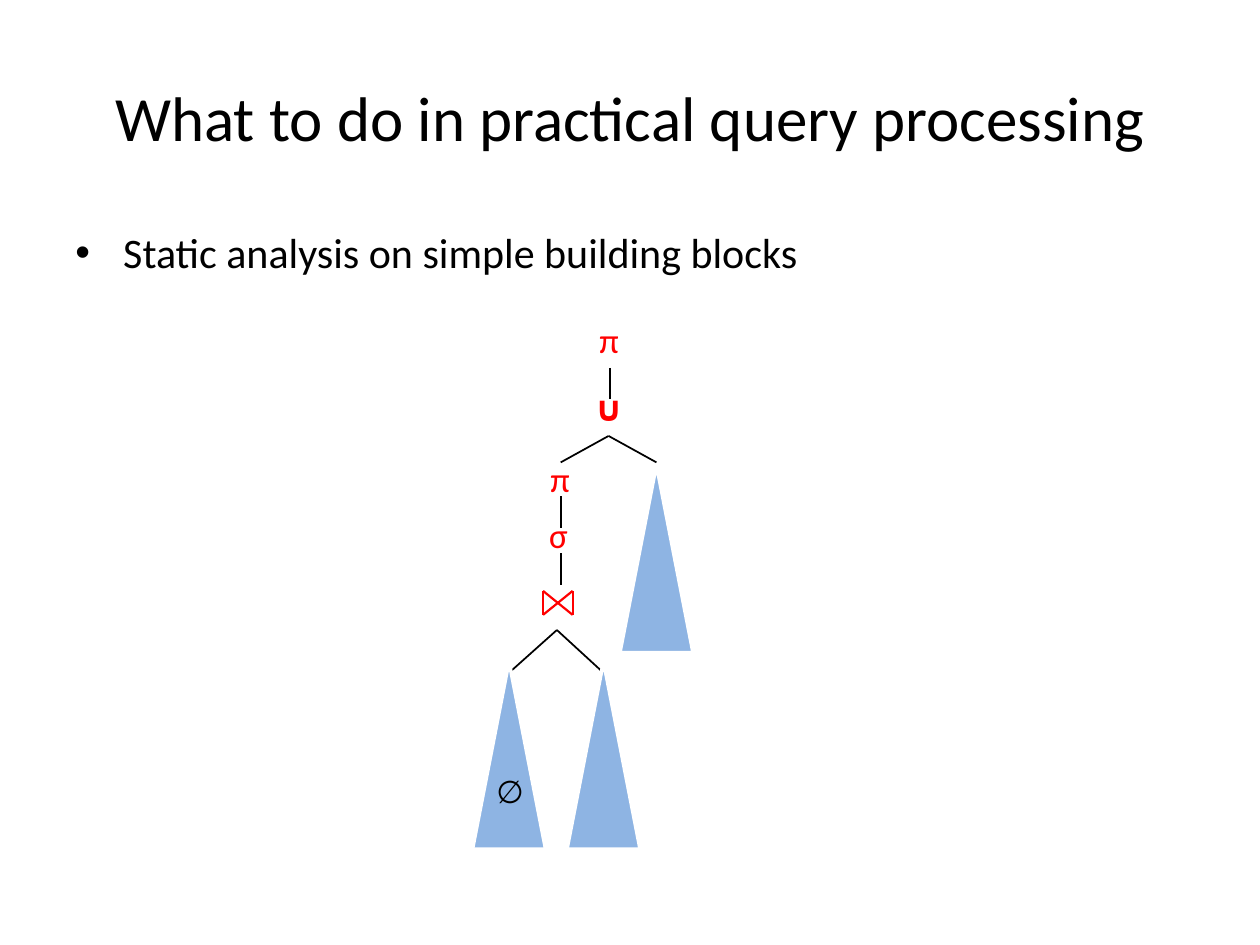
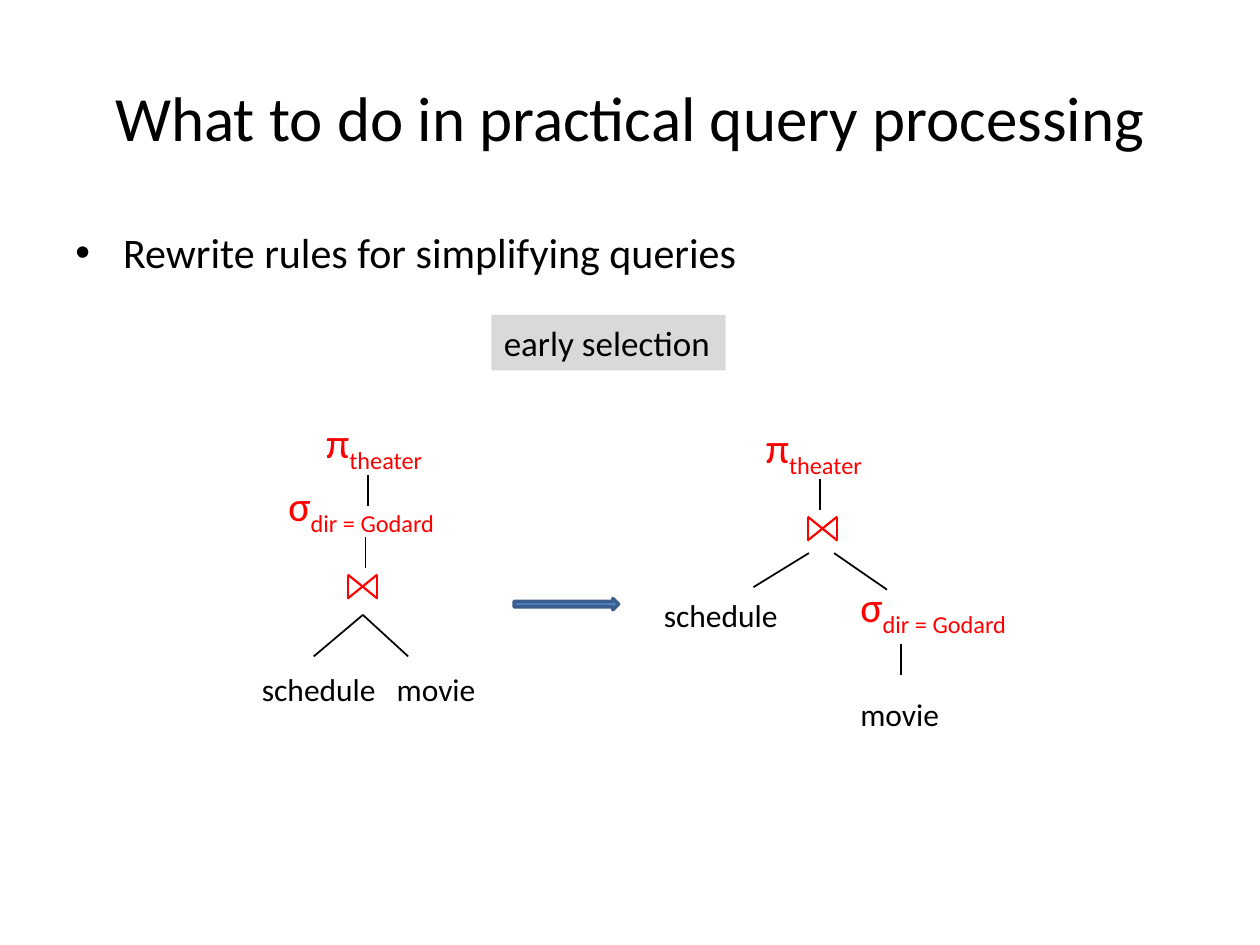
import lxml.etree
import pptx
import pptx.dml.color
import pptx.enum.shapes
import pptx.enum.text
import pptx.oxml.ns
import pptx.util

COLS, ROWS = 100, 75
CELL = pptx.util.Inches(0.1)
FONT = "Calibri"
BLACK, WHITE, RED = "000000", "FFFFFF", "FF0000"
SKY, GREY, BLUE, NAVY = "8EB4E3", "D9D9D9", "4F81BD", "3A5F8C"
TITLE = "What to do in practical query processing"
STEM = 2.5
SHAPE = pptx.enum.shapes.MSO_SHAPE
ANCHOR = pptx.enum.text.MSO_ANCHOR
ALIGN = pptx.enum.text.PP_ALIGN


def cells(*nums):
    """Turn columns and rows of the grid into lengths."""
    return [round(num * CELL) for num in nums]


def rgb(code):
    return pptx.dml.color.RGBColor.from_string(code)


def add_tag(parent, name, **attrs):
    tag = lxml.etree.SubElement(parent, pptx.oxml.ns.qn(name))
    for key, value in attrs.items():
        tag.set(key, value)


def style(run, size, color, bold=False):
    run.font.name = FONT
    run.font.size = pptx.util.Pt(size)
    run.font.bold = bold
    run.font.color.rgb = rgb(color)


def solid(slide, kind, box, fill, edge=None):
    shape = slide.shapes.add_shape(kind, *cells(*box))
    shape.shadow.inherit = False
    shape.fill.solid()
    shape.fill.fore_color.rgb = rgb(fill)
    if edge:
        shape.line.color.rgb = rgb(edge)
        shape.line.width = pptx.util.Pt(2)
    else:
        shape.line.fill.background()
    return shape


def label(slide, box, text, size, color=BLACK, fill=None, sub="", bold=False):
    """Place one line of text, with an optional subscript and fill."""
    if fill:
        shape = solid(slide, SHAPE.RECTANGLE, box, fill)
    else:
        shape = slide.shapes.add_textbox(*cells(*box))
    frame = shape.text_frame
    frame.word_wrap = False
    frame.auto_size = pptx.enum.text.MSO_AUTO_SIZE.SHAPE_TO_FIT_TEXT
    frame.vertical_anchor = ANCHOR.TOP
    para = frame.paragraphs[0]
    para.text = text
    para.alignment = ALIGN.LEFT
    if sub:
        low = para.add_run()
        low.text = sub
        low._r.get_or_add_rPr().set("baseline", "-25000")
    for run in para.runs:
        style(run, size, color, bold)
    return shape


def symbol(slide, box, text, size=20, sub="", bold=False):
    return label(slide, box, text, size, RED, WHITE, sub, bold)


def line(shapes, start, end, color=BLACK, width=1):
    kind = pptx.enum.shapes.MSO_CONNECTOR.STRAIGHT
    link = shapes.add_connector(kind, *cells(*start, *end))
    link.line.color.rgb = rgb(color)
    link.line.width = pptx.util.Pt(width)
    add_tag(link._element.spPr, "a:effectLst")
    return link


def stem(slide, col, row, node=None):
    """Draw a short upright edge, joined to the node above if given."""
    link = line(slide.shapes, (col, row), (col, row + STEM))
    if node:
        link.begin_connect(node, 2)


def fork(slide, top, *ends):
    for end in ends:
        line(slide.shapes, top, end)


def join(slide, col, row):
    """Draw the bow tie of a join operator."""
    group = slide.shapes.add_group_shape()
    right, low = col + 2.35, row + 1.9
    for start, end in (
        ((col, row), (col, low)),
        ((right, row), (right, low)),
        ((col, row), (right, low)),
        ((right, row), (col, low)),
    ):
        line(group.shapes, start, end, RED, 1.25)


def subtree(slide, tip, row):
    wide, high = 5.8, 14.9
    box = (tip - wide / 2, row, wide, high)
    solid(slide, SHAPE.ISOSCELES_TRIANGLE, box, SKY, WHITE)


def bullet(slide, text):
    shape = slide.shapes.add_textbox(*cells(5, 17.5, 90, 49.5))
    shape.text_frame.word_wrap = True
    para = shape.text_frame.paragraphs[0]
    para.text = text
    para.space_before = pptx.util.Pt(4.8)
    style(para.runs[0], 24, BLACK)
    props = para._p.get_or_add_pPr()
    dent = pptx.util.Inches(0.38)
    props.set("marL", str(dent))
    props.set("indent", str(-dent))
    add_tag(props, "a:buFont", typeface="Arial")
    add_tag(props, "a:buChar", char="•")


def page(deck, point):
    """Add a slide with the shared title and one bullet point."""
    slide = deck.slides.add_slide(deck.slide_layouts[5])
    title = slide.shapes.title
    title.left, title.top, title.width, title.height = cells(5, 3, 90, 12.5)
    frame = title.text_frame
    frame.text = TITLE
    frame.vertical_anchor = ANCHOR.MIDDLE
    frame.paragraphs[0].alignment = ALIGN.CENTER
    style(frame.paragraphs[0].runs[0], 36, BLACK)
    bullet(slide, point)
    return slide


def blocks(deck):
    slide = page(deck, "Static analysis on simple building blocks")
    symbol(slide, (46.2, 30.2, 4.2, 4.4), "∪", bold=True)
    root = symbol(slide, (46.6, 24.8, 3.6, 4.4), "π")
    symbol(slide, (42.7, 35.8, 3.6, 4.4), "π")
    symbol(slide, (42.6, 40.3, 3.7, 4.4), "σ")
    join(slide, 43.1, 46.9)
    stem(slide, 48.4, 29.2, root)
    for row in (39.4, 43.9):
        stem(slide, 44.5, row)
    fork(slide, (48.3, 34.6), (44.5, 36.7), (52.1, 36.7))
    fork(slide, (44.2, 50), (40.4, 53.4), (47.9, 53.4))
    for tip, row in ((52.1, 36.9), (47.9, 52.5), (40.4, 52.5)):
        subtree(slide, tip, row)
    label(slide, (38.4, 60.8, 4.1, 4), "∅", 18)


def rules(deck):
    slide = page(deck, "Rewrite rules for simplifying queries")
    label(slide, (39, 25, 18.6, 4.4), "early selection", 20, fill=GREY)
    solid(slide, SHAPE.RIGHT_ARROW, (40.8, 47.5, 8.3, 0.9), BLUE, NAVY)
    for col, row in ((21.9, 37.6), (67.3, 45.6)):
        symbol(slide, (col, row, 15.7, 5), "σ", 24, "dir = Godard")
    tops = [
        symbol(slide, (col, row, 10.6, 5), "π", 24, "theater")
        for col, row in ((24.9, 32.6), (59.8, 33))
    ]
    for text, wide, col, row in (
        ("schedule", 11.2, 19.8, 52.7),
        ("movie", 8.3, 30.5, 52.7),
        ("schedule", 11.2, 51.7, 46.8),
        ("movie", 8.3, 67.3, 54.7),
    ):
        label(slide, (col, row, wide, 4), text, 18)

    join(slide, 27.6, 45.6)
    stem(slide, 29.2, 37.7)
    stem(slide, 29, 42.6)
    fork(slide, (28.8, 48.8), (24.9, 52.1), (32.4, 52.1))

    join(slide, 64.1, 41)
    stem(slide, 65.1, 38, tops[1])
    stem(slide, 71.5, 51.1)
    fork(slide, (64.2, 43.9), (59.8, 46.6))
    fork(slide, (66.2, 43.9), (70.4, 46.8))


def main():
    deck = pptx.Presentation()
    deck.slide_width, deck.slide_height = cells(COLS, ROWS)
    blocks(deck)
    rules(deck)
    deck.save("out.pptx")


if __name__ == "__main__":
    main()
